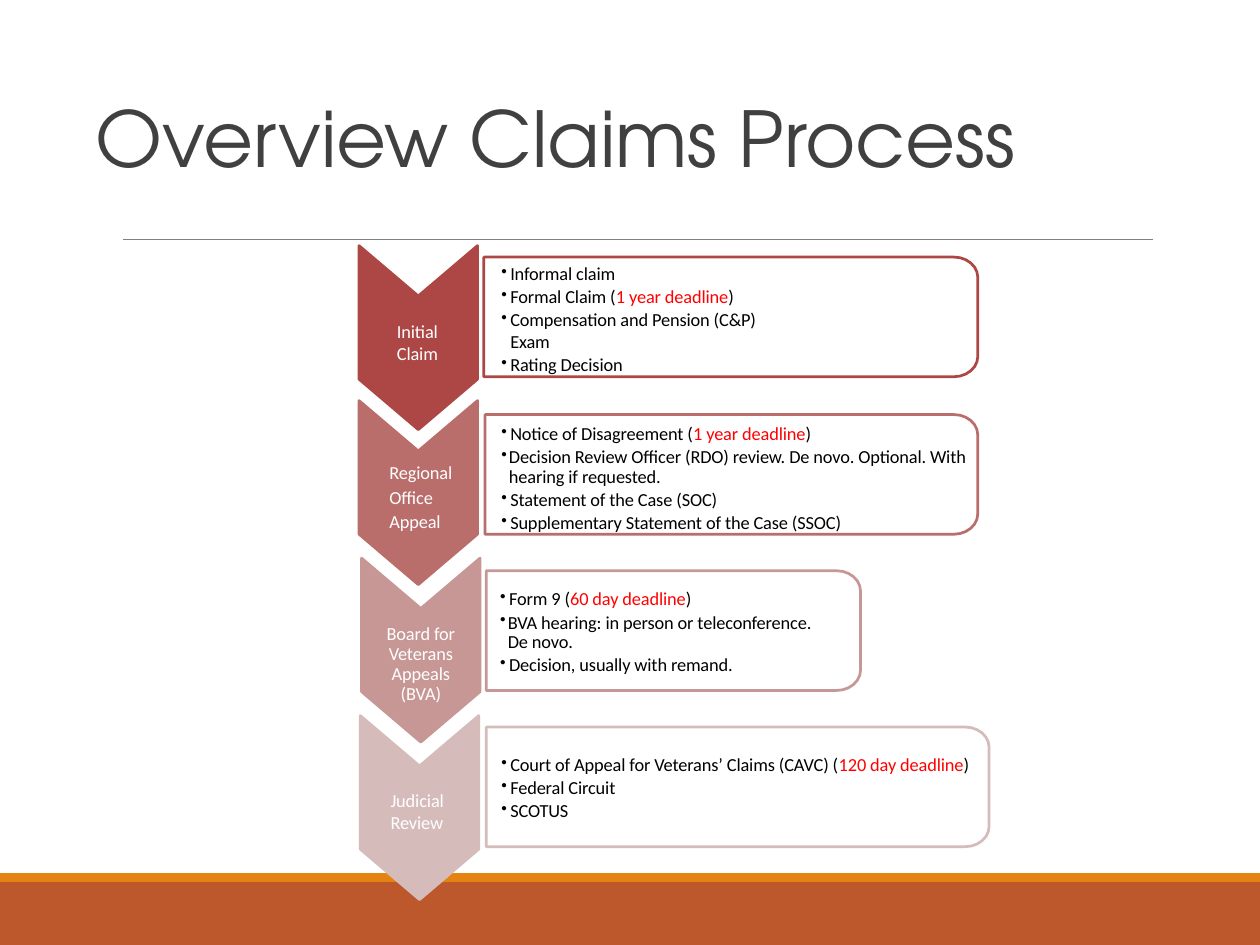
from dataclasses import dataclass
from math import cos, pi, sin

from lxml import etree
from pptx import Presentation
from pptx.dml.color import RGBColor
from pptx.enum.shapes import MSO_CONNECTOR, MSO_SHAPE
from pptx.enum.text import MSO_ANCHOR, MSO_AUTO_SIZE, PP_ALIGN
from pptx.oxml.ns import qn
from pptx.util import Inches, Pt

RECTANGLE = MSO_SHAPE.RECTANGLE
STRAIGHT = MSO_CONNECTOR.STRAIGHT
TOP, BOTTOM = MSO_ANCHOR.TOP, MSO_ANCHOR.BOTTOM
NO_AUTOFIT = MSO_AUTO_SIZE.NONE
LEFT, CENTER = PP_ALIGN.LEFT, PP_ALIGN.CENTER

TITLE_FONT, BODY_FONT = "TeX Gyre Adventor", "Calibri"
DEADLINE_RED = "FF0000"
BODY_SIZE = 10.5
CHEVRON_SIZE = (0.94, 1.46)
NOTCH = 0.4
PANEL_HEIGHT = 0.95
CORNER_WIDTH, CORNER_HEIGHT = 0.19, 0.16


@dataclass
class Step:
    """One stage; boxes are (left, top, width, height), and |...| marks a deadline."""
    color: str
    chevron_at: tuple
    label_box: tuple
    label: list
    panel_at: tuple
    panel_width: float
    list_box: tuple
    items: list
    label_align: object = LEFT
    label_leading: object = None
    label_space: float = 1.1
    tight_item: int = -1


STEPS = [
    Step("AD4745", (2.85, 1.95), (3.15, 2.53, 0.55, 0.37), ["Initial Claim"],
         (3.84, 2.04), 3.92, (3.96, 2.06, 2.33, 0.95),
         ["Informal claim", "Formal Claim (|1 year deadline|)",
          "Compensation and Pension (C&P) Exam", "Rating Decision"]),
    Step("BA6E6C", (2.85, 3.18), (3.09, 3.67, 0.65, 0.55),
         ["Regional", "Office", "Appeal"],
         (3.85, 3.29), 3.91, (3.96, 3.33, 3.77, 0.9),
         ["Notice of Disagreement (|1 year deadline|)",
          "Decision Review Officer (RDO) review. De novo. Optional. "
          "With hearing if requested.",
          "Statement of the Case (SOC)",
          "Supplementary Statement of the Case (SSOC)"],
         label_leading=Pt(11.4), label_space=2.4, tight_item=1),
    Step("C69795", (2.87, 4.43), (2.98, 4.95, 0.72, 0.67),
         ["Board for Veterans Appeals (BVA)"],
         (3.86, 4.53), 2.97, (3.95, 4.64, 2.55, 0.71),
         ["Form 9 (|60 day deadline|)",
          "BVA hearing: in person or teleconference. De novo.",
          "Decision, usually with remand."],
         label_align=CENTER, label_leading=0.9, label_space=2.3, tight_item=1),
    Step("D5BCBB", (2.86, 5.68), (3.1, 6.25, 0.6, 0.37), ["Judicial Review"],
         (3.86, 5.77), 3.99, (3.96, 5.96, 3.98, 0.58),
         ["Court of Appeal for Veterans’ Claims (CAVC) (|120 day deadline|)",
          "Federal Circuit", "SCOTUS"]),
]


def rgb(color):
    return RGBColor.from_string(color)


def add_run(paragraph, text, size, font_name, color):
    run = paragraph.add_run()
    run.text = text
    run.font.size = Pt(size)
    run.font.name = font_name
    run.font.color.rgb = rgb(color)
    run.font._element.set("spc", "-5")


def set_frame(frame, inset, anchor):
    frame.word_wrap = True
    frame.auto_size = NO_AUTOFIT
    frame.vertical_anchor = anchor
    frame.margin_left = frame.margin_right = frame.margin_bottom = 0
    frame.margin_top = Inches(inset)


def add_paragraphs(slide, box, count, inset):
    frame = slide.shapes.add_textbox(*map(Inches, box)).text_frame
    set_frame(frame, inset, TOP)
    return [frame.paragraphs[0]] + [frame.add_paragraph() for _ in range(count - 1)]


def add_bullet(paragraph, indent):
    properties = paragraph._p.get_or_add_pPr()
    properties.set("marL", str(Inches(indent)))
    properties.set("indent", str(-Inches(indent - 0.02)))
    etree.SubElement(properties, qn("a:buSzPct"), val="90000")
    etree.SubElement(properties, qn("a:buChar"), char="•")


def add_outline(slide, points):
    (start_x, start_y), *rest = [(Inches(x), Inches(y)) for x, y in points]
    builder = slide.shapes.build_freeform(start_x, start_y)
    builder.add_line_segments(rest, close=True)
    outline = builder.convert_to_shape()
    outline.shadow.inherit = False
    outline.line.width = Pt(1.56)
    return outline


def add_chevron(slide, left, top, color):
    width, height = CHEVRON_SIZE
    middle, right, bottom = left + width / 2, left + width, top + height
    chevron = add_outline(slide, [
        (right, top), (middle, top + NOTCH), (left, top),
        (left, bottom - NOTCH), (middle, bottom), (right, bottom - NOTCH)])
    chevron.fill.solid()
    chevron.fill.fore_color.rgb = rgb(color)
    chevron.line.color.rgb = rgb(color)


def add_panel(slide, left, top, width, color):
    """Outline a box whose two right corners are rounded."""
    bottom = top + PANEL_HEIGHT
    center_x = left + width - CORNER_WIDTH
    angles = [i * pi / 12 for i in range(7)]
    upper = [(center_x + CORNER_WIDTH * sin(a),
              top + CORNER_HEIGHT * (1 - cos(a))) for a in angles]
    lower = [(x, top + bottom - y) for x, y in reversed(upper)]
    panel = add_outline(slide, [(left, top), *upper, *lower, (left, bottom)])
    panel.fill.background()
    panel.line.color.rgb = rgb(color)


def add_label(slide, step):
    paragraphs = add_paragraphs(slide, step.label_box, len(step.label), 0.01)
    for paragraph, text in zip(paragraphs, step.label):
        paragraph.alignment = step.label_align
        paragraph.space_before = Pt(step.label_space)
        if step.label_leading:
            paragraph.line_spacing = step.label_leading
        add_run(paragraph, text, BODY_SIZE, BODY_FONT, "FFFFFF")


def add_items(slide, step):
    paragraphs = add_paragraphs(slide, step.list_box, len(step.items), 0.02)
    for i, (paragraph, item) in enumerate(zip(paragraphs, step.items)):
        tight = i == step.tight_item
        paragraph.space_before = Pt(1.7 if i == 0 else 2.1 if tight else 0.6)
        if tight:
            paragraph.line_spacing = Pt(11.3)
        add_bullet(paragraph, 0.08 if tight else 0.09)
        for j, part in enumerate(item.split("|")):
            add_run(paragraph, part, BODY_SIZE, BODY_FONT,
                    DEADLINE_RED if j % 2 else "000000")


def add_step(slide, step):
    add_chevron(slide, *step.chevron_at, step.color)
    add_label(slide, step)
    add_panel(slide, *step.panel_at, step.panel_width, step.color)
    add_items(slide, step)


def add_backdrop(slide):
    for top, height, color in ((7, 0.5, "BD582C"), (6.93, 0.07, "E48312")):
        band = slide.shapes.add_shape(
            RECTANGLE, 0, Inches(top), Inches(10), Inches(height))
        band.shadow.inherit = False
        band.fill.solid()
        band.fill.fore_color.rgb = rgb(color)
        band.line.fill.background()
    rule = slide.shapes.add_connector(
        STRAIGHT, Inches(0.98), Inches(1.9), Inches(9.15), Inches(1.9))
    rule.line.color.rgb = rgb("808080")
    rule.line.width = Pt(0.5)
    etree.SubElement(rule._element.spPr, qn("a:effectLst"))


def set_title(slide, text, box):
    title = slide.shapes.title
    title.left, title.top, title.width, title.height = map(Inches, box)
    set_frame(title.text_frame, 0.01, BOTTOM)
    paragraph = title.text_frame.paragraphs[0]
    paragraph.alignment = LEFT
    add_run(paragraph, text, 44, TITLE_FONT, "404040")


def main():
    deck = Presentation()
    deck.slide_width, deck.slide_height = Inches(10), Inches(7.5)
    slide = deck.slides.add_slide(deck.slide_layouts[5])
    add_backdrop(slide)
    set_title(slide, "Overview Claims Process", (0.76, 0.7, 7.99, 0.75))
    for step in STEPS:
        add_step(slide, step)
    deck.save("out.pptx")


if __name__ == "__main__":
    main()
